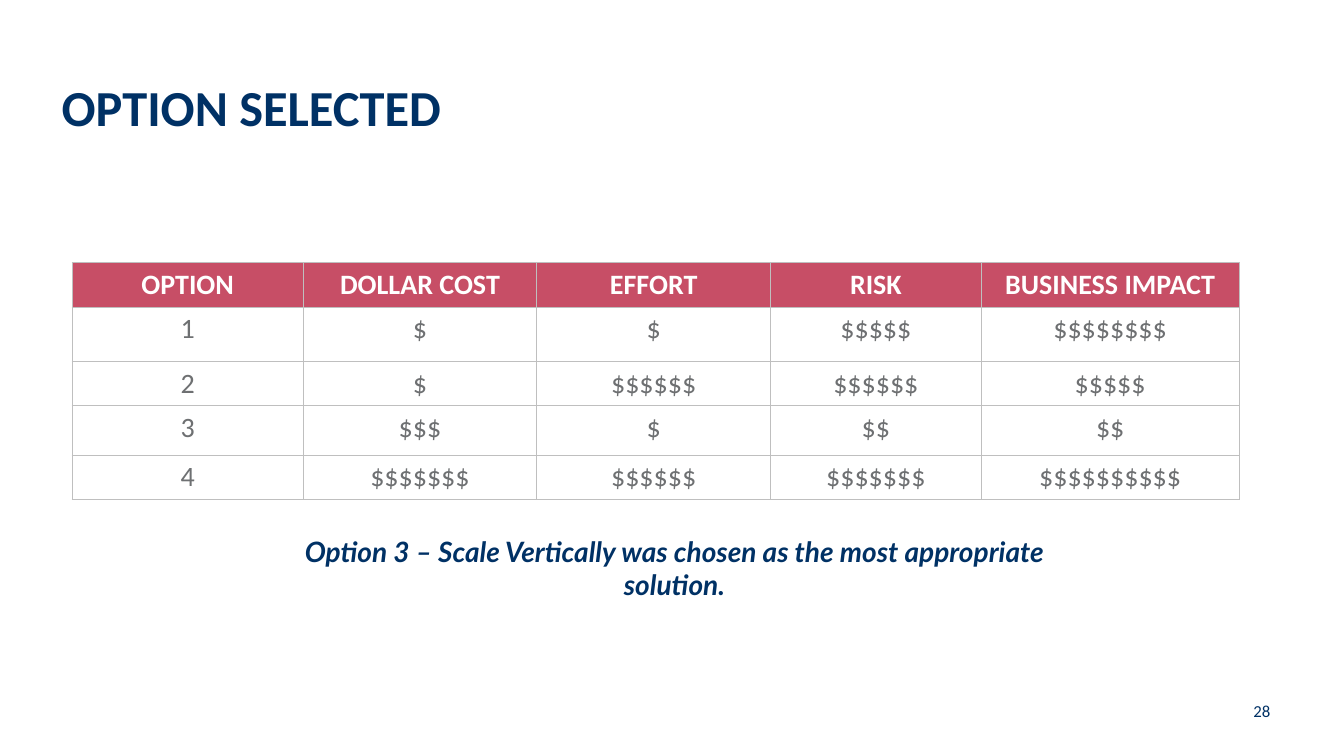
from pptx import Presentation
from pptx import util as u
from pptx.dml.color import RGBColor
from pptx.enum import text
from pptx.oxml import parse_xml
from pptx.oxml.ns import nsdecls

NAVY = RGBColor(0x00, 0x31, 0x65)
ROSE = RGBColor(0xC7, 0x4E, 0x66)
GREY = RGBColor(0x6E, 0x70, 0x72)
WHITE = RGBColor(0xFF, 0xFF, 0xFF)
RULE = RGBColor(0xBF, 0xBF, 0xBF)

HEADS = ["OPTION", "DOLLAR COST", "EFFORT", "RISK", "BUSINESS IMPACT"]
# Number of dollar signs per option: cost, effort, risk, impact
SCORES = [(1, 1, 5, 8), (1, 6, 6, 5), (3, 1, 2, 2), (7, 6, 7, 10)]
WIDTHS = [5.82, 5.89, 5.89, 5.31, 6.5]
HEIGHTS = [1.04, 1.37, 1.04, 1.24, 1.04]


def style(frame, size, color, bold=False, italic=False, face="Calibri",
          align=text.PP_ALIGN.LEFT):
    for para in frame.paragraphs:
        para.alignment = align
        for run in para.runs:
            font = run.font
            font.name, font.size = face, u.Pt(size)
            font.bold, font.italic = bold, italic
            font.color.rgb = color


def place(shape, left, top, width, height):
    shape.left, shape.top = u.Cm(left), u.Cm(top)
    shape.width, shape.height = u.Cm(width), u.Cm(height)


def title(slide, words):
    shape = slide.shapes.title
    place(shape, 1.3, 0.36, 30.84, 3.2)
    frame = shape.text_frame
    frame.text = words
    frame.vertical_anchor = text.MSO_ANCHOR.BOTTOM
    style(frame, 36, NAVY, bold=True)


def label(slide, words, left, top, width, height, size, **look):
    box = slide.shapes.add_textbox(u.Cm(left), u.Cm(top), u.Cm(width), u.Cm(height))
    frame = box.text_frame
    frame.word_wrap = True
    frame.text = words
    style(frame, size, NAVY, **look)
    return frame


def border(cell):
    props = cell._tc.get_or_add_tcPr()
    for i, side in enumerate(("lnL", "lnR", "lnT", "lnB")):
        line = parse_xml(
            f'<a:{side} {nsdecls("a")} w="12700"><a:solidFill>'
            f'<a:srgbClr val="{RULE}"/></a:solidFill></a:{side}>')
        props.insert(i, line)


def grid(slide, rows, left, top):
    table = slide.shapes.add_table(
        len(rows), len(WIDTHS), u.Cm(left), u.Cm(top),
        u.Cm(sum(WIDTHS)), u.Cm(sum(HEIGHTS))).table
    for col, width in zip(table.columns, WIDTHS):
        col.width = u.Cm(width)
    for r, row in enumerate(rows):
        table.rows[r].height = u.Cm(HEIGHTS[r])
        head = r == 0
        for c, words in enumerate(row):
            cell = table.cell(r, c)
            cell.text = words
            cell.fill.solid()
            cell.fill.fore_color.rgb = ROSE if head else WHITE
            if head:
                cell.vertical_anchor = text.MSO_ANCHOR.MIDDLE
            style(cell.text_frame, 20, WHITE if head else GREY, bold=head,
                  align=text.PP_ALIGN.CENTER)
            border(cell)


def main():
    deck = Presentation()
    deck.slide_width, deck.slide_height = u.Cm(33.87), u.Cm(19.05)
    slide = deck.slides.add_slide(deck.slide_layouts[5])

    # Heading
    title(slide, "OPTION SELECTED")

    # Comparison of options
    rows = [HEADS] + [[str(n)] + ["$" * k for k in marks]
                      for n, marks in enumerate(SCORES, 1)]
    grid(slide, rows, 1.82, 6.62)

    # Conclusion
    label(slide, "Option 3 – Scale Vertically was chosen as the most appropriate solution.",
          6.2, 13.34, 21.6, 1.11, 20, bold=True, italic=True, face="Lato",
          align=text.PP_ALIGN.CENTER)

    # Page number
    page = label(slide, "28", 31.34, 17.6, 1.25, 0.64, 12)
    page.vertical_anchor = text.MSO_ANCHOR.MIDDLE

    deck.save("out.pptx")


if __name__ == "__main__":
    main()
